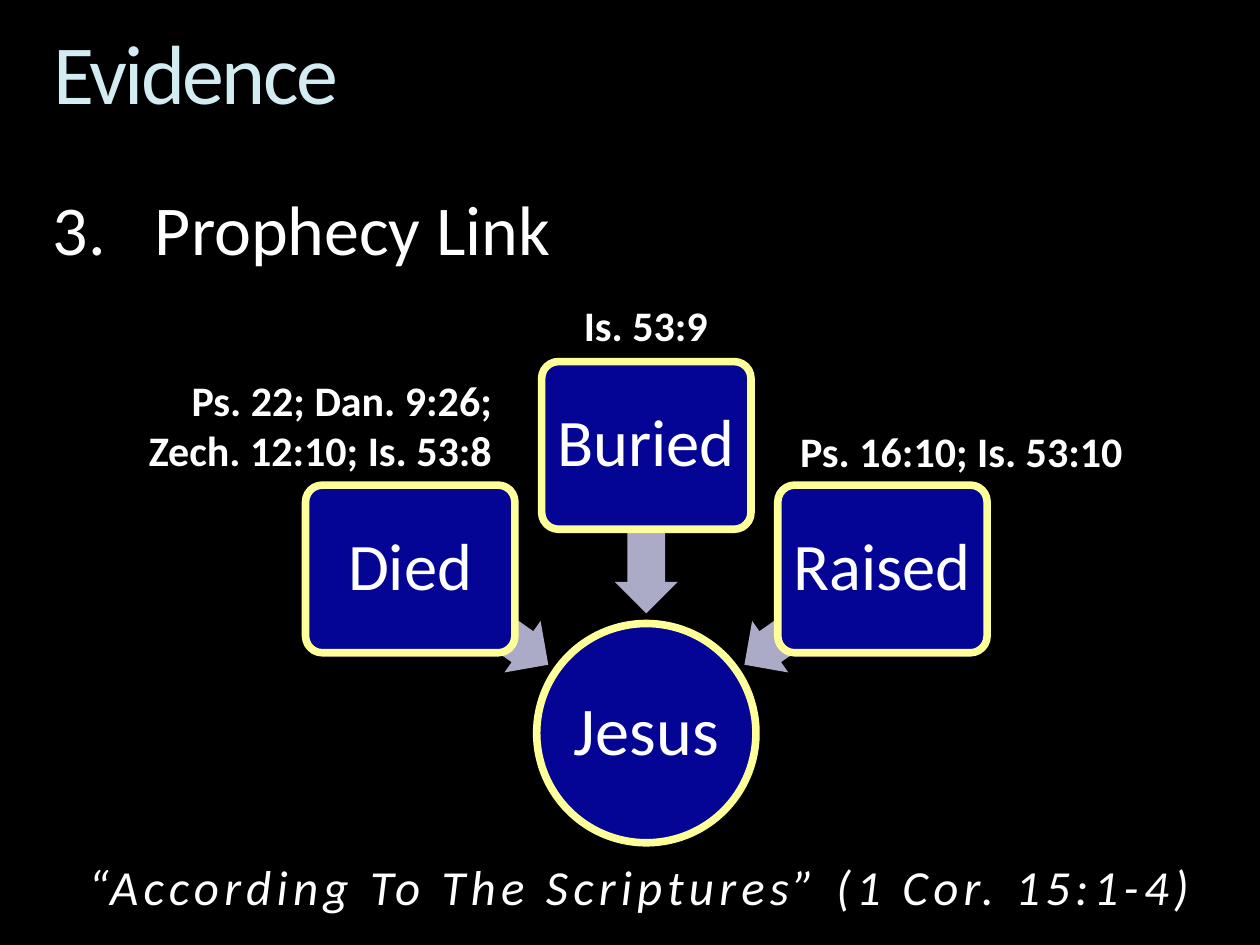
import pptx
import pptx.util
import pptx.dml.color
import pptx.enum.shapes
import pptx.enum.text
import pptx.oxml.ns
from dataclasses import dataclass
from lxml import etree
from pptx.util import Cm

SHAPES = pptx.enum.shapes.MSO_SHAPE
ALIGN = pptx.enum.text.PP_ALIGN
ANCHOR = pptx.enum.text.MSO_ANCHOR
FONT = "Calibri"
WHITE, NAVY, YELLOW, LILAC = "FFFFFF", "050595", "FFFF99", "ABABC8"
CENTER_X = 13.03
BOX_STEP, BOX_WIDTH, BOX_HEIGHT = 4.76, 4.22, 3.38
ARROW_WIDTH, ARROW_HEIGHT = 3.4, 1.27
CIRCLE_SIZE, CIRCLE_TOP = 4.42, 12.57


@dataclass
class Event:
    name: str
    column: int
    top: float
    arrow_top: float
    arrow_shift: float
    rotation: int


@dataclass
class Caption:
    text: str
    left: float
    top: float
    width: float
    height: float
    align: object


EVENTS = [
    Event("Died", -1, 9.78, 11.79, -3.37, 215),
    Event("Buried", 0, 7.29, 10.03, 0, 270),
    Event("Raised", 1, 9.78, 11.79, 3.37, 325),
]
REFERENCES = [
    Caption("Ps. 22; Dan. 9:26; Zech. 12:10; Is. 53:8", 1.91, 7.42, 8.26, 2.31, ALIGN.RIGHT),
    Caption("Is. 53:9", 8.89, 5.92, 8.26, 1.27, ALIGN.CENTER),
    Caption("Ps. 16:10; Is. 53:10", 15.88, 8.46, 8.26, 1.27, ALIGN.LEFT),
]
QUOTE = Caption("“According To The Scriptures” (1 Cor. 15:1-4)", 1.35, 17.15, 23.09, 1.45, ALIGN.CENTER)


def color(value: str):
    return pptx.dml.color.RGBColor.from_string(value)


def set_insets(frame, inset: float) -> None:
    frame.margin_left = frame.margin_right = Cm(inset)
    frame.margin_top = frame.margin_bottom = Cm(inset)


def format_text(shape, size: float, align, fill: str = WHITE, bold: bool = False,
                italic: bool = False, spacing: float = 0, line_spacing: float = 1.0) -> None:
    """Format the only paragraph of a shape; spacing is between letters, in points."""
    paragraph = shape.text_frame.paragraphs[0]
    paragraph.alignment = align
    paragraph.line_spacing = line_spacing
    paragraph.space_before = pptx.util.Pt(0)
    for span in paragraph.runs:
        span.font.name = FONT
        span.font.size = pptx.util.Pt(size)
        span.font.bold = bold
        span.font.italic = italic
        span.font.color.rgb = color(fill)
        if spacing:
            span.font._element.set("spc", str(int(spacing * 100)))


def place(shape, left: float, top: float, width: float, height: float) -> None:
    shape.left, shape.top = Cm(left), Cm(top)
    shape.width, shape.height = Cm(width), Cm(height)


def add_node(page, kind, text: str, top: float, width: float, height: float,
             center: float, size: float) -> None:
    node = page.shapes.add_shape(kind, Cm(center - width / 2), Cm(top), Cm(width), Cm(height))
    node.shadow.inherit = False
    node.fill.solid()
    node.fill.fore_color.rgb = color(NAVY)
    node.line.color.rgb = color(YELLOW)
    node.line.width = pptx.util.Pt(4.33)
    if kind == SHAPES.ROUNDED_RECTANGLE:
        node.adjustments[0] = 0.1
    frame = node.text_frame
    frame.text = text
    frame.word_wrap = False
    frame.vertical_anchor = ANCHOR.MIDDLE
    set_insets(frame, 0.1)
    format_text(node, size, ALIGN.CENTER, line_spacing=0.9)


def add_event(page, event: Event) -> None:
    """Draw the arrow first, so that the box covers its tail."""
    arrow_left = CENTER_X + event.arrow_shift - ARROW_WIDTH / 2
    arrow = page.shapes.add_shape(SHAPES.LEFT_ARROW, Cm(arrow_left), Cm(event.arrow_top),
                                  Cm(ARROW_WIDTH), Cm(ARROW_HEIGHT))
    arrow.shadow.inherit = False
    arrow.rotation = event.rotation
    arrow.adjustments[0], arrow.adjustments[1] = 0.6, 0.5
    arrow.fill.solid()
    arrow.fill.fore_color.rgb = color(LILAC)
    arrow.line.fill.background()
    add_node(page, SHAPES.ROUNDED_RECTANGLE, event.name, event.top, BOX_WIDTH, BOX_HEIGHT,
             CENTER_X + event.column * BOX_STEP, 38)


def add_caption(page, caption: Caption, size: float, wrap: bool = True, **style) -> None:
    box = page.shapes.add_textbox(Cm(caption.left), Cm(caption.top),
                                  Cm(caption.width), Cm(caption.height))
    box.text_frame.text = caption.text
    box.text_frame.word_wrap = wrap
    format_text(box, size, caption.align, **style)


def fill_title(title) -> None:
    place(title, 1.07, 0.64, 23.29, 1.9)
    frame = title.text_frame
    frame.text = "Evidence"
    frame.auto_size = pptx.enum.text.MSO_AUTO_SIZE.NONE
    frame.vertical_anchor = ANCHOR.TOP
    set_insets(frame, 0)
    format_text(title, 48, ALIGN.LEFT, fill="D3ECF2", spacing=-1.5, line_spacing=0.9)


def fill_list(body) -> None:
    place(body, 0.81, 3.81, 10.64, 1.8)
    frame = body.text_frame
    frame.text = "Prophecy Link"
    frame.auto_size = pptx.enum.text.MSO_AUTO_SIZE.NONE
    properties = frame.paragraphs[0]._p.get_or_add_pPr()
    properties.set("marL", str(Cm(2.06)))
    properties.set("indent", str(-Cm(2.06)))
    etree.SubElement(properties, pptx.oxml.ns.qn("a:buFont"), typeface="+mj-lt")
    etree.SubElement(properties, pptx.oxml.ns.qn("a:buAutoNum"), type="arabicPeriod", startAt="3")
    format_text(body, 40, ALIGN.LEFT, line_spacing=0.9)


def main() -> None:
    deck = pptx.Presentation()
    deck.slide_width, deck.slide_height = Cm(25.4), Cm(19.05)
    page = deck.slides.add_slide(deck.slide_layouts[1])
    page.background.fill.solid()
    page.background.fill.fore_color.rgb = color("000000")

    fill_title(page.shapes.title)
    fill_list(page.placeholders[1])
    add_node(page, SHAPES.OVAL, "Jesus", CIRCLE_TOP, CIRCLE_SIZE, CIRCLE_SIZE, CENTER_X, 39)
    for event in EVENTS:
        add_event(page, event)
    add_caption(page, QUOTE, 28, wrap=False, italic=True, spacing=3)
    for reference in REFERENCES:
        add_caption(page, reference, 24, bold=True)
    deck.save("out.pptx")


if __name__ == "__main__":
    main()
